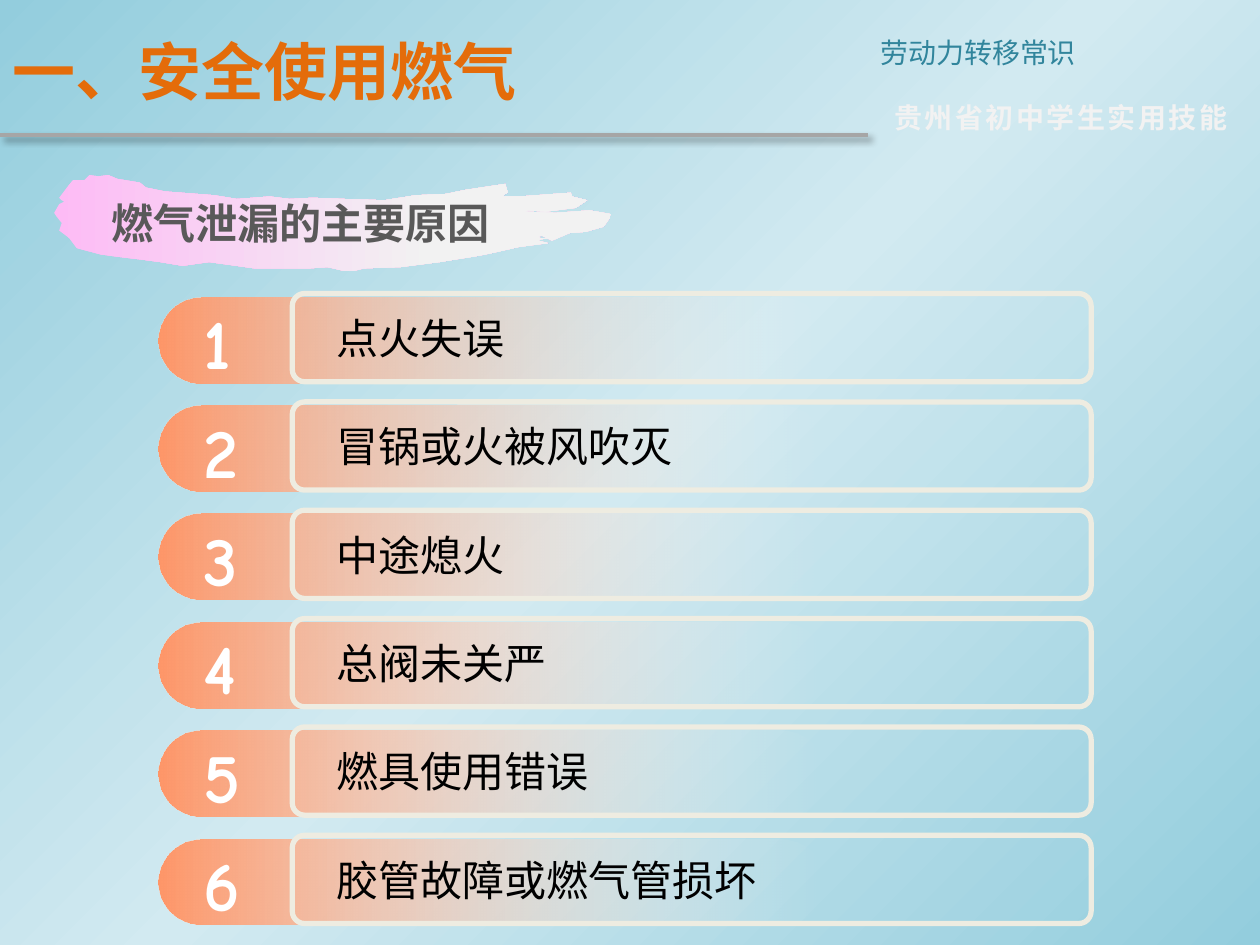
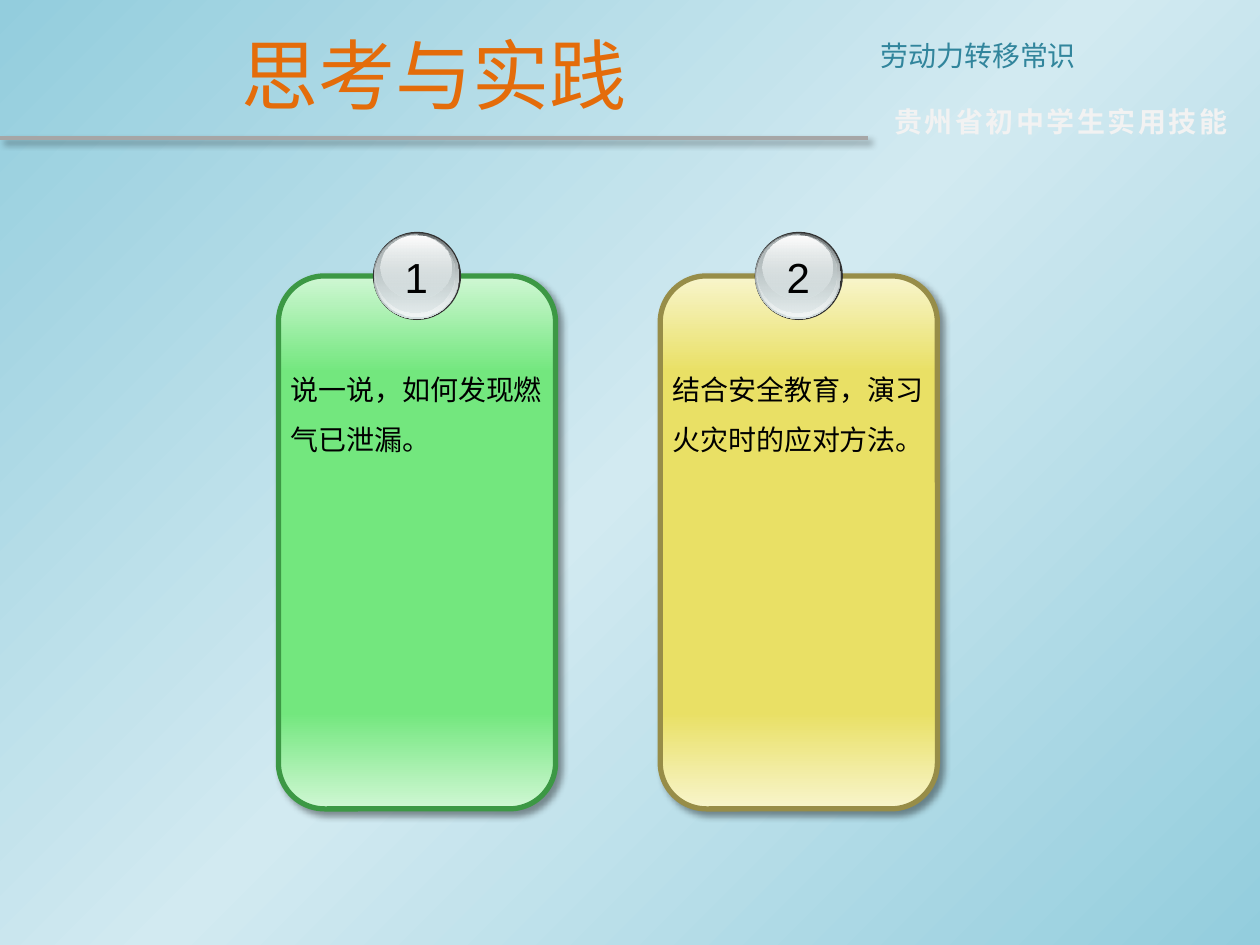
from lxml.etree import SubElement
from pptx import Presentation
from pptx.dml.color import RGBColor
from pptx.enum.shapes import MSO_CONNECTOR, MSO_SHAPE
from pptx.enum.text import MSO_ANCHOR, PP_ALIGN
from pptx.oxml import parse_xml
from pptx.oxml.ns import qn
from pptx.util import Inches, Pt

SKY = RGBColor(0x93, 0xCD, 0xDD)
PALE_SKY = RGBColor(0xD2, 0xEA, 0xF1)
TEAL = RGBColor(0x31, 0x85, 0x9C)
ORANGE = RGBColor(0xE4, 0x6C, 0x0A)
CORAL = RGBColor(0xFF, 0x97, 0x69)
PINK = RGBColor(0xFD, 0xBB, 0xF5)
IVORY = RGBColor(0xEE, 0xEC, 0xE1)
OFF_WHITE = RGBColor(0xF2, 0xF2, 0xF2)
WHITE = RGBColor(0xFF, 0xFF, 0xFF)
BLACK = RGBColor(0, 0, 0)
GRAY = RGBColor(0xA6, 0xA6, 0xA6)
DARK_GRAY = RGBColor(0x59, 0x59, 0x59)
RIM = RGBColor(0x33, 0x33, 0x33)
STEEL = RGBColor(0x63, 0x68, 0x69)
MID_STEEL = RGBColor(0xAA, 0xB2, 0xB3)
SILVER = RGBColor(0xD6, 0xE1, 0xE2)
PALE_SILVER = RGBColor(0xF1, 0xF5, 0xF5)
GREEN = RGBColor(0x73, 0xE7, 0x7E)
PALE_GREEN = RGBColor(0xD0, 0xF7, 0xD4)
DARK_GREEN = RGBColor(0x3C, 0x98, 0x44)
YELLOW = RGBColor(0xE9, 0xE0, 0x65)
PALE_YELLOW = RGBColor(0xF8, 0xF5, 0xCC)
DARK_YELLOW = RGBColor(0x97, 0x8D, 0x48)

CJK = "Noto Sans CJK SC"
SHADOW = (
    '<a:effectLst xmlns:a="http://schemas.openxmlformats.org/drawingml/2006/main">'
    '<a:outerShdw blurRad="50800" dist="38100" dir="2700000" algn="tl" rotWithShape="0">'
    '<a:srgbClr val="000000"><a:alpha val="40000"/></a:srgbClr>'
    '</a:outerShdw></a:effectLst>'
)

presentation = Presentation()
presentation.slide_width = Inches(10)
presentation.slide_height = Inches(7.5)
CELL = presentation.slide_width // 100  # the slide is a grid of 100 columns by 75 rows


def paint(fill, element, stops, angle):
    """Fill with (position, colour[, opacity]) stops; a single stop is a plain fill."""
    if len(stops) == 1:
        fill.solid()
        fill.fore_color.rgb = stops[0][1]
        return
    fill.gradient()
    gradient = next(element.iter(qn("a:gradFill")))
    stop_list = gradient.find(qn("a:gsLst"))
    for default_stop in list(stop_list):
        stop_list.remove(default_stop)
    for position, color, *opacity in stops:
        stop = SubElement(stop_list, qn("a:gs"), pos=str(position * 1000))
        color_element = SubElement(stop, qn("a:srgbClr"), val=str(color))
        for percent in opacity:
            SubElement(color_element, qn("a:alpha"), val=str(percent * 1000))
    gradient.find(qn("a:lin")).set("ang", str(angle * 60000))


def write(shape, text, size, color, font=CJK, bold=False, align=PP_ALIGN.LEFT,
          anchor=MSO_ANCHOR.MIDDLE, wrap=True, leading=None, tracking=0):
    frame = shape.text_frame
    frame.word_wrap = wrap
    frame.vertical_anchor = anchor
    paragraph = frame.paragraphs[0]
    paragraph.alignment = align
    if leading:
        paragraph.line_spacing = Pt(leading)
    run = paragraph.add_run()
    run.text = text
    run.font.color.rgb = color
    for name, value in {"size": Pt(size), "bold": bold, "name": font}.items():
        setattr(run.font, name, value)
    properties = next(shape.element.iter(qn("a:rPr")))
    properties.set("spc", str(tracking))
    east_asian = CJK if font == "Calibri" else font
    SubElement(properties, qn("a:ea"), typeface=east_asian)


# Shared background and header
master = presentation.slide_master
paint(master.background.fill, master.element, [(0, SKY), (50, PALE_SKY), (100, SKY)], 45)

TITLES = [
    ("一、安全使用燃气", 0.5, {"size": 36, "bold": True}),
    ("思考与实践", 0.75, {"size": 44, "align": PP_ALIGN.CENTER}),
]
HEADER_WIDTH = 68.9
title_only = presentation.slide_layouts[5]
for title_text, top, title_format in TITLES:
    slide = presentation.slides.add_slide(title_only)
    rule_top = int((top + 10.2) * CELL)
    rule = slide.shapes.add_connector(
        MSO_CONNECTOR.STRAIGHT, 0, rule_top, int(HEADER_WIDTH * CELL), rule_top)
    rule.line.color.rgb = GRAY
    rule.line.width = Pt(2.25)
    rule.element.spPr.append(parse_xml(SHADOW))

    title = slide.shapes.title
    edges = {"left": 0, "top": top, "width": HEADER_WIDTH, "height": 10.2}
    for edge, cells in edges.items():
        setattr(title, edge, int(cells * CELL))
    write(title, title_text, color=ORANGE, **title_format)

    box = [int(cells * CELL) for cells in (HEADER_WIDTH, top + 1.8, 31.1, 3.7)]
    write(slide.shapes.add_textbox(*box), "劳动力转移常识", 16, TEAL)
    box = [int(cells * CELL) for cells in (70, top + 7, 29, 3.7)]
    write(slide.shapes.add_textbox(*box), "贵州省初中学生实用技能", 16, OFF_WHITE,
          bold=True, wrap=False, tracking=150)

causes_slide, practice_slide = presentation.slides

# Slide 1: brush stroke heading, outlined in tenths of a cell
BRUSH = [
    (71, 139), (67, 143), (58, 143), (53, 149), (47, 157), (49, 159), (51, 160),
    (47, 162), (43, 169), (45, 172), (49, 177), (47, 183), (55, 189), (61, 197),
    (80, 202), (95, 204), (112, 206), (127, 208), (145, 211), (166, 208), (202, 213),
    (246, 213), (260, 212), (273, 215), (281, 215), (289, 213), (318, 212),
    (349, 208), (380, 203), (390, 201), (412, 196), (435, 193), (427, 191),
    (429, 190), (436, 189), (429, 189), (427, 188), (430, 187), (438, 191),
    (452, 185), (465, 184), (479, 180), (484, 173), (485, 170), (468, 167),
    (441, 169), (416, 168), (419, 167), (433, 168), (457, 165), (466, 159),
    (454, 156), (453, 153), (412, 156), (399, 156), (401, 154), (403, 153),
    (401, 146), (368, 151), (354, 154), (330, 155), (305, 159), (274, 158),
    (248, 157), (230, 158), (214, 156), (188, 158), (176, 156), (170, 155),
    (131, 152), (116, 149), (111, 145), (93, 142), (86, 139), (78, 140),
]
builder = causes_slide.shapes.build_freeform(*BRUSH[0], scale=CELL / 10)
builder.add_line_segments(BRUSH[1:], close=True)
brush = builder.convert_to_shape()
brush.shadow.inherit = False
brush.line.fill.background()
paint(brush.fill, brush.element, [(0, PINK), (68, OFF_WHITE)], 0)
box = [int(cells * CELL) for cells in (7.9, 14.7, 34.9, 6)]
write(causes_slide.shapes.add_textbox(*box), "燃气泄漏的主要原因", 24, DARK_GRAY,
      font="Calibri", bold=True, wrap=False)

# Slide 1: numbered causes
CAUSES = ["点火失误", "冒锅或火被风吹灭", "中途熄火", "总阀未关严", "燃具使用错误",
          "胶管故障或燃气管损坏"]
ROW_TOP, ROW_PITCH = 23.3, 8.6
for index, cause in enumerate(CAUSES):
    top = ROW_TOP + index * ROW_PITCH
    pill_box, text_box, frame_box, number_box = [
        [int(cells * CELL) for cells in box] for box in (
            (12.6, top + 0.3, 52.8, 6.8), (25.7, top + 1, 58.6, 5),
            (23.2, top, 63.4, 7), (15.2, top, 3.9, 7.7))]
    pill = causes_slide.shapes.add_shape(MSO_SHAPE.ROUNDED_RECTANGLE, *pill_box)
    pill.adjustments[0] = 0.5
    pill.shadow.inherit = False
    pill.line.fill.background()
    paint(pill.fill, pill.element, [(0, CORAL), (100, WHITE, 0)], 0)

    write(causes_slide.shapes.add_textbox(*text_box), cause, 24, BLACK)

    frame = causes_slide.shapes.add_shape(MSO_SHAPE.ROUNDED_RECTANGLE, *frame_box)
    frame.adjustments[0] = 0.14
    frame.shadow.inherit = False
    frame.fill.background()
    frame.line.color.rgb = IVORY
    frame.line.width = Pt(3)

    write(causes_slide.shapes.add_textbox(*number_box), str(index + 1), 40, WHITE,
          font="Comic Neue", bold=True, anchor=MSO_ANCHOR.TOP, wrap=False)

# Slide 2: task cards, each with a glossy numbered button
CARDS = [
    ("说一说，如何发现燃气已泄漏。", GREEN, PALE_GREEN, DARK_GREEN),
    ("结合安全教育，演习火灾时的应对方法。", YELLOW, PALE_YELLOW, DARK_YELLOW),
]
BUTTON_LAYERS = [  # offset from the card's left, top, width, height, stops
    (7.5, 18.4, 7, 7, [(0, RIM)]),
    (7.55, 18.5, 6.8, 6.8, [(0, STEEL), (100, SILVER)]),
    (7.65, 18.5, 6.6, 6.6, [(0, SILVER, 0), (100, PALE_SILVER)]),
    (7.7, 18.6, 6.3, 6.2, [(0, MID_STEEL), (100, SILVER, 48)]),
    (8.1, 18.7, 5.6, 5, [(0, WHITE), (100, SILVER, 38)]),
]
CARD_LEFT, CARD_PITCH, CARD_WIDTH = 22.1, 30.3, 22
for index, (task, color, pale, dark) in enumerate(CARDS):
    left = CARD_LEFT + index * CARD_PITCH
    card_box, text_box, number_box = [
        [int(cells * CELL) for cells in box] for box in (
            (left, 21.9, CARD_WIDTH, 42.3), (left, 27.8, CARD_WIDTH, 9.1),
            (left + 9, 19.5, 3.9, 5))]
    card = practice_slide.shapes.add_shape(MSO_SHAPE.ROUNDED_RECTANGLE, *card_box)
    paint(card.fill, card.element, [(0, pale), (18, color), (82, color), (100, pale)], 90)
    card.line.color.rgb = dark
    card.line.width = Pt(3)
    card.element.spPr.append(parse_xml(SHADOW))
    write(practice_slide.shapes.add_textbox(*text_box), task, 16, BLACK,
          anchor=MSO_ANCHOR.TOP, leading=28.5)

    for offset, top, width, height, stops in BUTTON_LAYERS:
        box = [int(cells * CELL) for cells in (left + offset, top, width, height)]
        layer = practice_slide.shapes.add_shape(MSO_SHAPE.OVAL, *box)
        layer.shadow.inherit = False
        layer.line.fill.background()
        paint(layer.fill, layer.element, stops, 90)
    write(practice_slide.shapes.add_textbox(*number_box), str(index + 1), 24, BLACK,
          font="Arial", align=PP_ALIGN.CENTER, wrap=False)

presentation.save("out.pptx")
